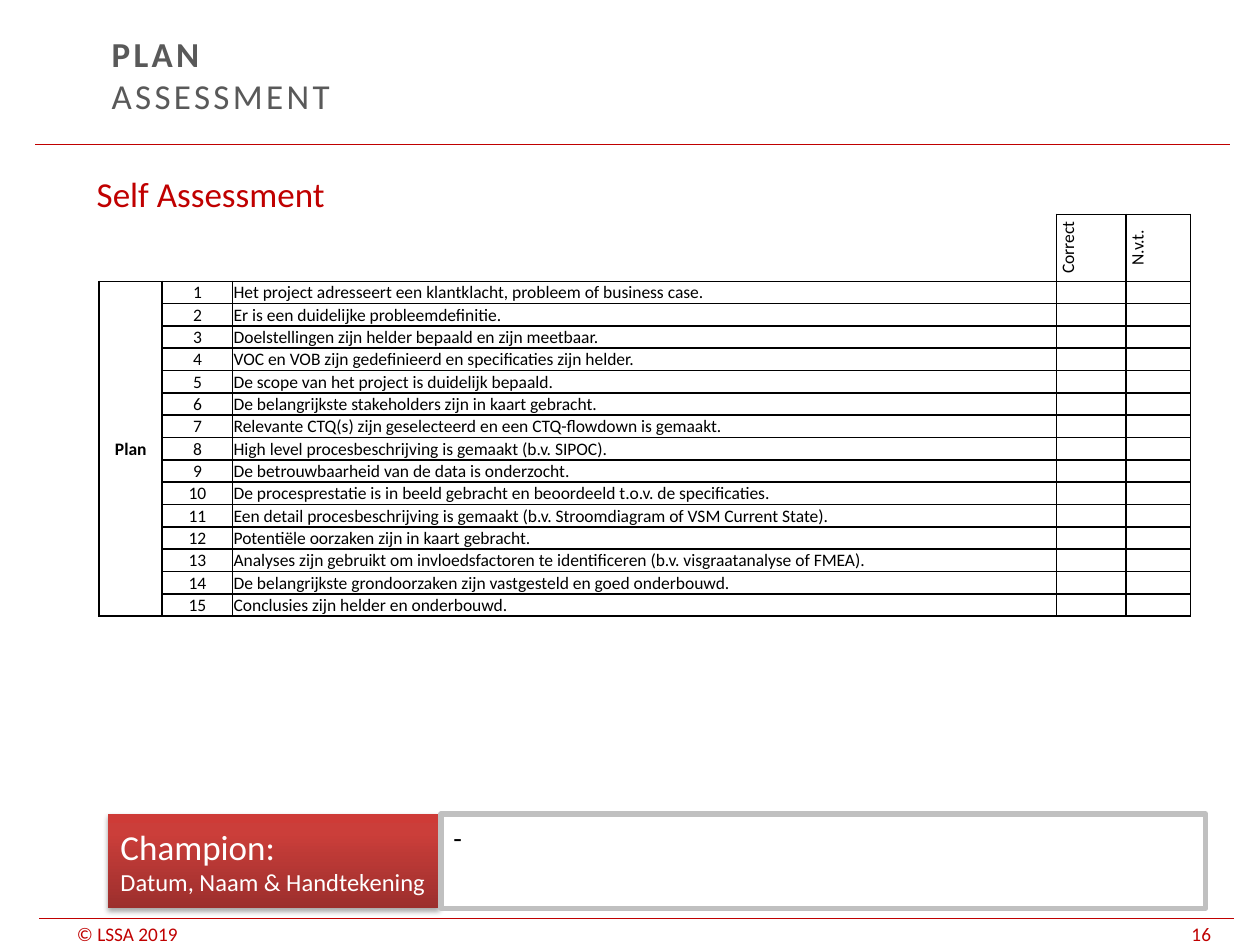
from lxml.etree import SubElement
from copy import deepcopy
from pptx import Presentation
from pptx.dml.color import RGBColor
from pptx.enum.shapes import MSO_CONNECTOR, MSO_SHAPE
from pptx.enum.text import MSO_ANCHOR, PP_ALIGN
from pptx.oxml.ns import qn
from pptx.util import Cm, Pt

RED = RGBColor(0xC0, 0x00, 0x00)
GREY = RGBColor(0x59, 0x59, 0x59)
SILVER = RGBColor(0xC0, 0xC0, 0xC0)
BLACK = RGBColor(0, 0, 0)
WHITE = RGBColor(0xFF, 0xFF, 0xFF)
GRADIENT = [(0, RGBColor(0x9C, 0x2F, 0x2D)), (0.8, RGBColor(0xCB, 0x3E, 0x3A)),
            (1, RGBColor(0xCE, 0x3B, 0x37))]
FONT = "Calibri"

# Content
PHASE = "Plan"
ANSWERS = ["Correct", "N.v.t."]
QUESTIONS = [
    "Het project adresseert een klantklacht, probleem of business case.",
    "Er is een duidelijke probleemdefinitie.",
    "Doelstellingen zijn helder bepaald en zijn meetbaar.",
    "VOC en VOB zijn gedefinieerd en specificaties zijn helder.",
    "De scope van het project is duidelijk bepaald.",
    "De belangrijkste stakeholders zijn in kaart gebracht.",
    "Relevante CTQ(s) zijn geselecteerd en een CTQ-flowdown is gemaakt.",
    "High level procesbeschrijving is gemaakt (b.v. SIPOC).",
    "De betrouwbaarheid van de data is onderzocht.",
    "De procesprestatie is in beeld gebracht en beoordeeld t.o.v. de specificaties.",
    "Een detail procesbeschrijving is gemaakt (b.v. Stroomdiagram of VSM Current State).",
    "Potentiële oorzaken zijn in kaart gebracht.",
    "Analyses zijn gebruikt om invloedsfactoren te identificeren (b.v. visgraatanalyse of FMEA).",
    "De belangrijkste grondoorzaken zijn vastgesteld en goed onderbouwd.",
    "Conclusies zijn helder en onderbouwd.",
]
COLUMNS = [1.27, 1.42, 16.61, 1.4, 1.3]
HEADER_HEIGHT, ROW_HEIGHT = 1.35, 0.45


def add_text(p, text, size=10, color=BLACK, bold=False, align=PP_ALIGN.LEFT, spacing=None):
    p.alignment = align
    r = p.add_run()
    r.text = text
    r.font.name, r.font.size, r.font.bold = FONT, Pt(size), bold
    r.font.color.rgb = color
    if spacing:
        r.font._element.set("spc", str(spacing))


def add_box(s, left, top, width, height, anchor=MSO_ANCHOR.TOP, inset=0.13):
    sp = s.shapes.add_textbox(Cm(left), Cm(top), Cm(width), Cm(height))
    tf = sp.text_frame
    tf.word_wrap = True
    tf.vertical_anchor = anchor
    tf.margin_top = tf.margin_bottom = Cm(inset)
    return tf.paragraphs[0]


def add_panel(s, left, width, anchor):
    sp = s.shapes.add_shape(MSO_SHAPE.RECTANGLE, Cm(left), Cm(16.41), Cm(width), Cm(1.9))
    sp.shadow.inherit = False
    sp.text_frame.word_wrap = True
    sp.text_frame.vertical_anchor = anchor
    return sp


def add_rule(s, left, top, width):
    line = s.shapes.add_connector(MSO_CONNECTOR.STRAIGHT, Cm(left), Cm(top),
                                  Cm(left + width), Cm(top))
    line.line.color.rgb, line.line.width = RED, Pt(0.75)
    SubElement(line._element.spPr, qn("a:effectLst"))


def set_borders(cell, sides):
    tcPr = cell._tc.get_or_add_tcPr()
    for side in "LRTB":
        ln = SubElement(tcPr, qn(f"a:ln{side}"), w=str(Pt(1)))
        if side in sides:
            fill = SubElement(ln, qn("a:solidFill"))
            SubElement(fill, qn("a:srgbClr"), val=str(BLACK))
        else:
            SubElement(ln, qn("a:noFill"))


def fill_cell(cell, text="", sides="LRTB", vertical=False, **fmt):
    set_borders(cell, sides)
    cell.fill.background()
    cell.margin_left = cell.margin_right = cell.margin_top = Cm(0.02)
    cell.margin_bottom = 0
    cell.vertical_anchor = MSO_ANCHOR.MIDDLE
    if vertical:
        cell._tc.tcPr.set("vert", "vert270")
    p = cell.text_frame.paragraphs[0]
    if text:
        add_text(p, text, **fmt)
    else:
        # Small end mark keeps empty rows low
        SubElement(p._p, qn("a:endParaRPr"), sz="1000")


def add_checklist(s):
    center = PP_ALIGN.CENTER
    n = len(QUESTIONS)
    table = s.shapes.add_table(n + 1, len(COLUMNS), Cm(2), Cm(4.32), Cm(sum(COLUMNS)),
                               Cm(HEADER_HEIGHT + n * ROW_HEIGHT)).table
    table.first_row = table.horz_banding = False
    for column, width in zip(table.columns, COLUMNS):
        column.width = Cm(width)
    for i, row in enumerate(table.rows):
        row.height = Cm(ROW_HEIGHT if i else HEADER_HEIGHT)

    for col, sides in enumerate(["B", "B", "RB"]):
        fill_cell(table.cell(0, col), sides=sides)
    for col, answer in enumerate(ANSWERS, 3):
        fill_cell(table.cell(0, col), answer, vertical=True, align=center)
    for i, question in enumerate(QUESTIONS, 1):
        fill_cell(table.cell(i, 0), PHASE if i == 1 else "", bold=True, align=center)
        fill_cell(table.cell(i, 1), str(i), align=center)
        fill_cell(table.cell(i, 2), question)
        for col in (3, 4):
            fill_cell(table.cell(i, col))
    table.cell(1, 0).merge(table.cell(n, 0))


def add_champion(s):
    sp = add_panel(s, 2.18, 6.68, MSO_ANCHOR.MIDDLE)
    sp.line.fill.background()
    sp.fill.gradient()
    sp.fill.gradient_angle = 90
    stops = sp.fill._xPr.find(qn("a:gradFill")).find(qn("a:gsLst"))
    stops.append(deepcopy(stops[-1]))
    for stop, (position, color) in zip(sp.fill.gradient_stops, GRADIENT):
        stop.position, stop.color.rgb = position, color
    # Soft shadow below the panel
    effects = sp._element.spPr.find(qn("a:effectLst"))
    shadow = SubElement(effects, qn("a:outerShdw"), blurRad=str(Pt(3.1)),
                        dist=str(Pt(1.8)), dir="5400000", rotWithShape="0")
    color = SubElement(shadow, qn("a:srgbClr"), val=str(BLACK))
    SubElement(color, qn("a:alpha"), val="35000")
    tf = sp.text_frame
    add_text(tf.paragraphs[0], "Champion:", size=20, color=WHITE)
    add_text(tf.add_paragraph(), "Datum, Naam & Handtekening", size=14, color=WHITE)


def main():
    prs = Presentation()
    prs.slide_width, prs.slide_height = Cm(25.4), Cm(19.05)
    s = prs.slides.add_slide(prs.slide_layouts[6])

    # Footer and rules
    for text, left, width in [("© LSSA 2019", 1.3, 3.6), ("16", 23.77, 1.63)]:
        p = add_box(s, left, 18.57, width, 0.48, MSO_ANCHOR.BOTTOM, inset=0)
        add_text(p, text, size=11, color=RED)
    add_rule(s, 0.71, 2.92, 24.08)
    add_rule(s, 0.79, 18.52, 24.08)

    # Title and heading
    p = add_box(s, 2, 0.66, 18, 1.68, MSO_ANCHOR.MIDDLE)
    add_text(p, "PLAN", size=20, color=GREY, bold=True, spacing=190)
    p.add_line_break()
    add_text(p, "ASSESSMENT", size=20, color=GREY, spacing=190)
    add_text(add_box(s, 1.7, 3.35, 22, 14), "Self Assessment", size=20, color=RED)

    add_checklist(s)

    # Sign-off
    add_champion(s)
    sp = add_panel(s, 8.89, 15.42, MSO_ANCHOR.TOP)
    sp.fill.solid()
    sp.fill.fore_color.rgb = WHITE
    sp.line.color.rgb, sp.line.width = SILVER, Pt(3)
    add_text(sp.text_frame.paragraphs[0], "-", size=16)

    prs.save("out.pptx")


if __name__ == "__main__":
    main()
